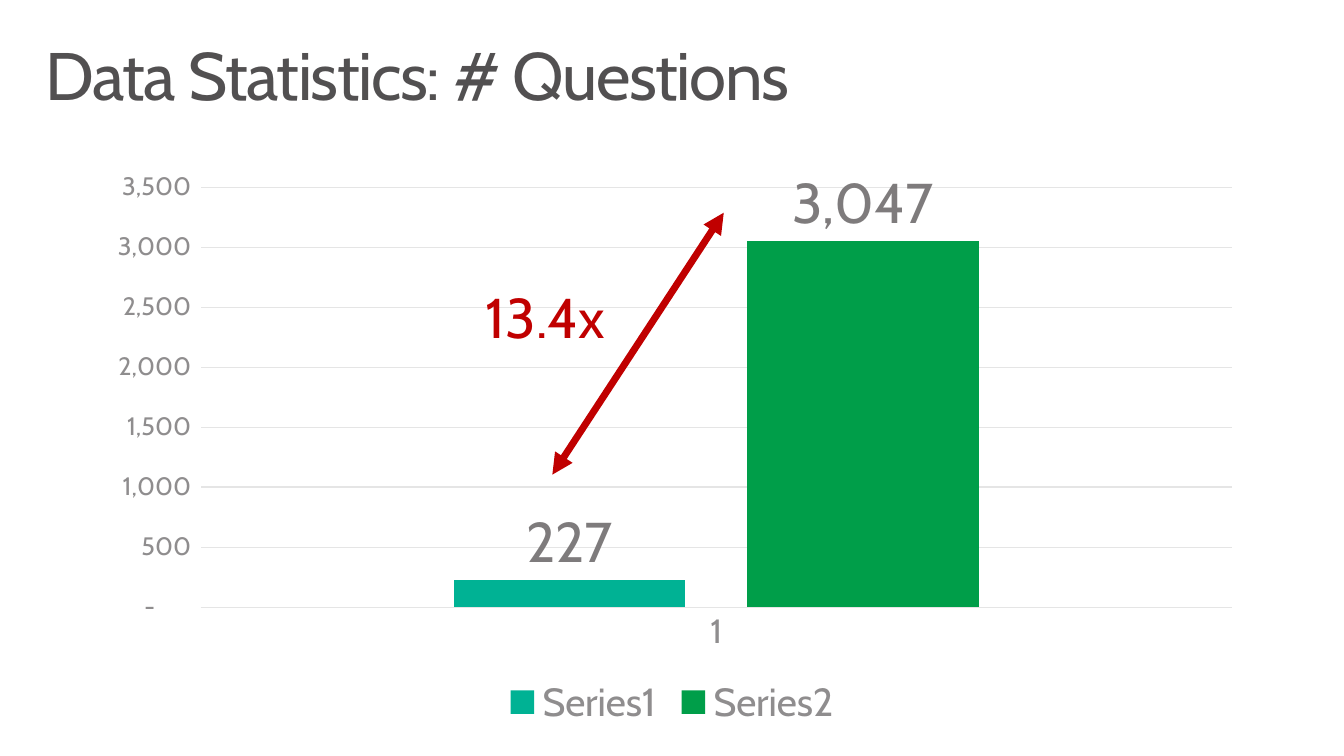
"""Build a slide comparing two question counts in a column chart."""
import pptx
import pptx.chart.data
import pptx.dml.color
import pptx.enum.chart
import pptx.enum.shapes
import pptx.enum.text
import pptx.oxml.ns
import pptx.util
from lxml import etree

Cm = pptx.util.Cm
Pt = pptx.util.Pt
RGBColor = pptx.dml.color.RGBColor
qn = pptx.oxml.ns.qn

FONT = "Cabin"
DARK_GRAY = RGBColor(0x52, 0x50, 0x51)
LABEL_GRAY = RGBColor(0x7E, 0x7B, 0x7C)
AXIS_GRAY = RGBColor(0x8F, 0x8D, 0x8E)
GRID_GRAY = RGBColor(0xE5, 0xE5, 0xE5)
TEAL = RGBColor(0x00, 0xB2, 0x94)
GREEN = RGBColor(0x00, 0x9E, 0x49)
RED = RGBColor(0xC0, 0x00, 0x00)
NUMBER_FORMAT = '_(* #,##0_);_(* \\(#,##0\\);_(* "-"??_);_(@_)'


def style_font(font, size, color):
    font.name = FONT
    font.size = Pt(size)
    font.bold = False
    font.color.rgb = color


def set_insets(text_frame, horizontal, vertical):
    text_frame.margin_left = text_frame.margin_right = Cm(horizontal)
    text_frame.margin_top = text_frame.margin_bottom = Cm(vertical)
    text_frame.vertical_anchor = pptx.enum.text.MSO_ANCHOR.TOP
    text_frame.word_wrap = True


presentation = pptx.Presentation()
presentation.slide_width = Cm(33.87)
presentation.slide_height = Cm(19.05)
slide = presentation.slides.add_slide(presentation.slide_layouts[5])

title = slide.shapes.title
title.left, title.top, title.width, title.height = Cm(0.74), Cm(0.81), Cm(32.39), Cm(2.49)
title.text_frame.text = "Data Statistics: # Questions"
set_insets(title.text_frame, 0.41, 0.25)
title.text_frame.auto_size = pptx.enum.text.MSO_AUTO_SIZE.NONE
paragraph = title.text_frame.paragraphs[0]
paragraph.alignment = pptx.enum.text.PP_ALIGN.LEFT
paragraph.line_spacing = 0.9
style_font(paragraph.font, 48, DARK_GRAY)
paragraph.runs[0].font.language_id = None
paragraph.runs[0].font._element.set("spc", "-100")

chart_data = pptx.chart.data.CategoryChartData(number_format=NUMBER_FORMAT)
chart_data.categories = ["1"]
chart_data.add_series("Series1", [227])
chart_data.add_series("Series2", [3047])
chart = slide.shapes.add_chart(
    pptx.enum.chart.XL_CHART_TYPE.COLUMN_CLUSTERED,
    Cm(2.24), Cm(4.04), Cm(29.39), Cm(14.45), chart_data).chart
chart.has_title = False
style_font(chart.font, 10, DARK_GRAY)

chart.has_legend = True
chart.legend.position = pptx.enum.chart.XL_LEGEND_POSITION.BOTTOM
chart.legend.include_in_layout = False
style_font(chart.legend.font, 28, AXIS_GRAY)

for axis, size in ((chart.category_axis, 24), (chart.value_axis, 18)):
    axis.major_tick_mark = axis.minor_tick_mark = pptx.enum.chart.XL_TICK_MARK.NONE
    style_font(axis.tick_labels.font, size, AXIS_GRAY)
chart.value_axis.format.line.fill.background()
chart.value_axis.tick_labels.number_format = NUMBER_FORMAT
chart.value_axis.tick_labels.number_format_is_linked = False
for line in (chart.category_axis.format.line, chart.value_axis.major_gridlines.format.line):
    line.color.rgb = GRID_GRAY
    line.width = Pt(0.75)

plot = chart.plots[0]
plot.gap_width = 219
plot.overlap = -27
plot.vary_by_categories = False
for series, color in zip(plot.series, (TEAL, GREEN)):
    series.format.fill.solid()
    series.format.fill.fore_color.rgb = color
    labels = series.data_labels
    labels.show_value = True
    labels.position = pptx.enum.chart.XL_LABEL_POSITION.OUTSIDE_END
    labels.number_format = NUMBER_FORMAT
    labels.number_format_is_linked = False
    style_font(labels.font, 40, LABEL_GRAY)

growth = slide.shapes.add_group_shape()
arrow = growth.shapes.add_connector(
    pptx.enum.shapes.MSO_CONNECTOR.STRAIGHT, Cm(13.92), Cm(11.96), Cm(18.24), Cm(5.36))
arrow.line.color.rgb = RED
arrow.line.width = Pt(5)
for end in ("a:headEnd", "a:tailEnd"):
    etree.SubElement(arrow.line._get_or_add_ln(), qn(end), type="triangle")
etree.SubElement(arrow._element.spPr, qn("a:effectLst"))

ratio = growth.shapes.add_textbox(Cm(11.73), Cm(6.91), Cm(5.21), Cm(2.36))
ratio.text_frame.text = "13.4x"
set_insets(ratio.text_frame, 0.51, 0.41)
ratio.text_frame.auto_size = pptx.enum.text.MSO_AUTO_SIZE.SHAPE_TO_FIT_TEXT
paragraph = ratio.text_frame.paragraphs[0]
paragraph.line_spacing = 0.9
paragraph.space_after = Pt(6)
style_font(paragraph.font, 40, RED)

presentation.save("out.pptx")
